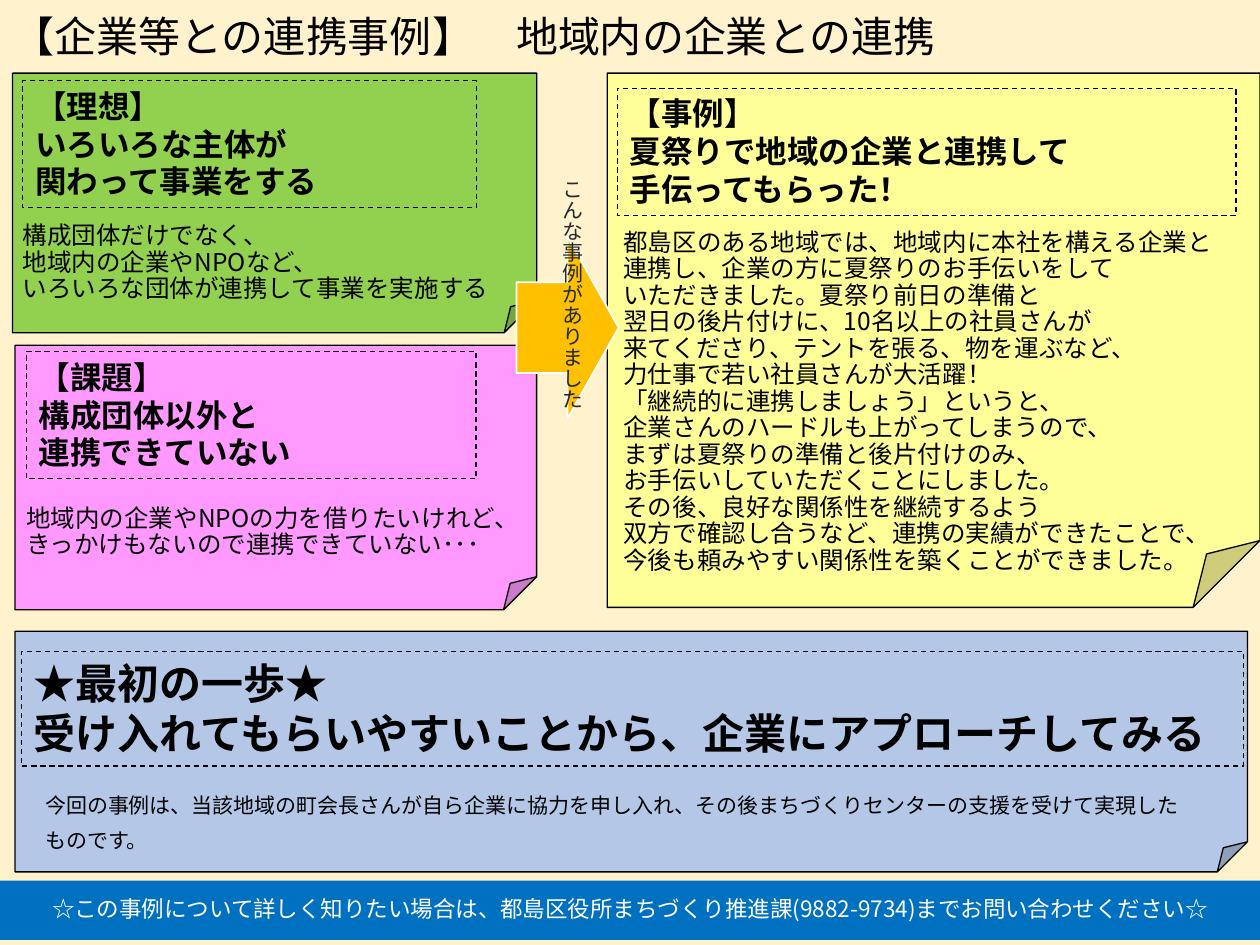
"""Build a slide on a case of working with local companies."""
import pptx
import pptx.util
import pptx.dml.color
import pptx.enum.dml
import pptx.enum.shapes
import pptx.enum.text
import pptx.oxml.ns
import lxml.etree

Pt = pptx.util.Pt
qn = pptx.oxml.ns.qn
Shape = pptx.enum.shapes.MSO_SHAPE
Align = pptx.enum.text.PP_ALIGN
Anchor = pptx.enum.text.MSO_ANCHOR
FONT = "Noto Sans CJK JP"
COLORS = {
    "cream": "FFF2CC", "green": "92D050", "pink": "FF99FF",
    "yellow": "FFFF99", "blue": "B4C7E7", "navy": "0070C0",
    "gold": "FFC000", "black": "000000", "white": "FFFFFF", "slate": "222A35",
}


def paint(fill, name):
    fill.solid()
    fill.fore_color.rgb = pptx.dml.color.RGBColor.from_string(COLORS[name])


def write(shape, text, size, color="black", bold=False, space=0.9,
          align=Align.LEFT, anchor=Anchor.MIDDLE):
    frame = shape.text_frame
    frame.text = text
    frame.word_wrap = True
    frame.vertical_anchor = anchor
    for para in frame.paragraphs:
        para.alignment = align
        para.line_spacing = space
        for run in para.runs:
            font = run.font
            font.size, font.bold, font.name = Pt(size), bold, FONT
            paint(font.fill, color)
            east = lxml.etree.Element(qn("a:ea"), typeface=FONT)
            font._element.find(qn("a:latin")).addnext(east)


def draw(slide, kind, box, fill=None, line=None, width=0.75):
    shape = slide.shapes.add_shape(kind, *map(Pt, box))
    shape.shadow.inherit = False
    if fill:
        paint(shape.fill, fill)
    else:
        shape.fill.background()
    if line:
        paint(shape.line.fill, line)
        shape.line.width = Pt(width)
    else:
        shape.line.fill.background()
    return shape


def card(slide, box, fill):
    shape = draw(slide, Shape.FOLDED_CORNER, box, fill, "black")
    geom = shape._element.spPr.find(qn("a:prstGeom"))
    fold = geom.find(qn("a:avLst"))
    lxml.etree.SubElement(fold, qn("a:gd"), name="adj", fmla="val 12500")


def head(slide, box, text, size=18):
    shape = draw(slide, Shape.RECTANGLE, box, line="black")
    shape.line.dash_style = pptx.enum.dml.MSO_LINE.DASH
    write(shape, text, size, bold=True, space=1.0, anchor=Anchor.TOP)


def note(slide, box, text, size=14, **style):
    shape = slide.shapes.add_textbox(*map(Pt, box))
    write(shape, text, size, **style)
    return shape


def main():
    deck = pptx.Presentation()
    deck.slide_width, deck.slide_height = Pt(720), Pt(540)
    slide = deck.slides.add_slide(deck.slide_layouts[6])
    paint(slide.background.fill, "cream")

    note(slide, (0, -0.7, 641.5, 46), "【企業等との連携事例】　地域内の企業との連携", 24)

    card(slide, (7.2, 41.8, 299.5, 148.3), "green")
    card(slide, (8.6, 197.3, 298.1, 151.2), "pink")
    card(slide, (347, 41.8, 373, 305.3), "yellow")
    card(slide, (8.6, 360.7, 704.2, 137.5), "blue")

    head(slide, (13, 46.1, 259.2, 72.7),
         "【理想】\nいろいろな主体が\n関わって事業をする")
    head(slide, (15.1, 200.9, 257, 72.7),
         "【課題】\n構成団体以外と\n連携できていない")
    head(slide, (352.8, 50.4, 353.5, 72.7),
         "【事例】\n夏祭りで地域の企業と連携して\n手伝ってもらった！")
    head(slide, (12.2, 372.2, 698.4, 65.5),
         "★最初の一歩★\n受け入れてもらいやすいことから、企業にアプローチしてみる", 24)

    note(slide, (5.8, 121, 326.2, 59),
         "構成団体だけでなく、\n地域内の企業やNPOなど、\n"
         "いろいろな団体が連携して事業を実施する")
    note(slide, (7.9, 267.1, 298.8, 74.2),
         "地域内の企業やNPOの力を借りたいけれど、\n"
         "きっかけもないので連携できていない･･･")
    note(slide, (349.2, 119.5, 360, 221),
         "都島区のある地域では、地域内に本社を構える企業と"
         "連携し、企業の方に夏祭りのお手伝いをして\n"
         "いただきました。夏祭り前日の準備と\n"
         "翌日の後片付けに、10名以上の社員さんが\n"
         "来てくださり、テントを張る、物を運ぶなど、\n"
         "力仕事で若い社員さんが大活躍！\n"
         "「継続的に連携しましょう」というと、\n"
         "企業さんのハードルも上がってしまうので、\n"
         "まずは夏祭りの準備と後片付けのみ、\n"
         "お手伝いしていただくことにしました。\n"
         "その後、良好な関係性を継続するよう\n"
         "双方で確認し合うなど、連携の実績ができたことで、"
         "今後も頼みやすい関係性を築くことができました。")
    note(slide, (18.7, 444.2, 669.6, 46.1),
         "今回の事例は、当該地域の町会長さんが自ら企業に協力を申し入れ、"
         "その後まちづくりセンターの支援を受けて実現したものです。", 12, space=1.4)

    banner = draw(slide, Shape.RECTANGLE, (0, 503.3, 720, 33.8), "navy")
    write(banner, "☆この事例について詳しく知りたい場合は、都島区役所まちづくり推進課"
          "(9882-9734)までお問い合わせください☆", 12.9, "white", align=Align.CENTER)

    draw(slide, Shape.RIGHT_ARROW, (295.2, 135.4, 58.3, 103.7), "gold", "white", 1)
    label = note(slide, (308.9, 95, 28.8, 180.7), "こんな事例がありました", 12,
                 color="slate", space=1.0, align=Align.CENTER, anchor=Anchor.TOP)
    label.text_frame._txBody.bodyPr.set("vert", "eaVert")
    deck.save("out.pptx")


if __name__ == "__main__":
    main()
